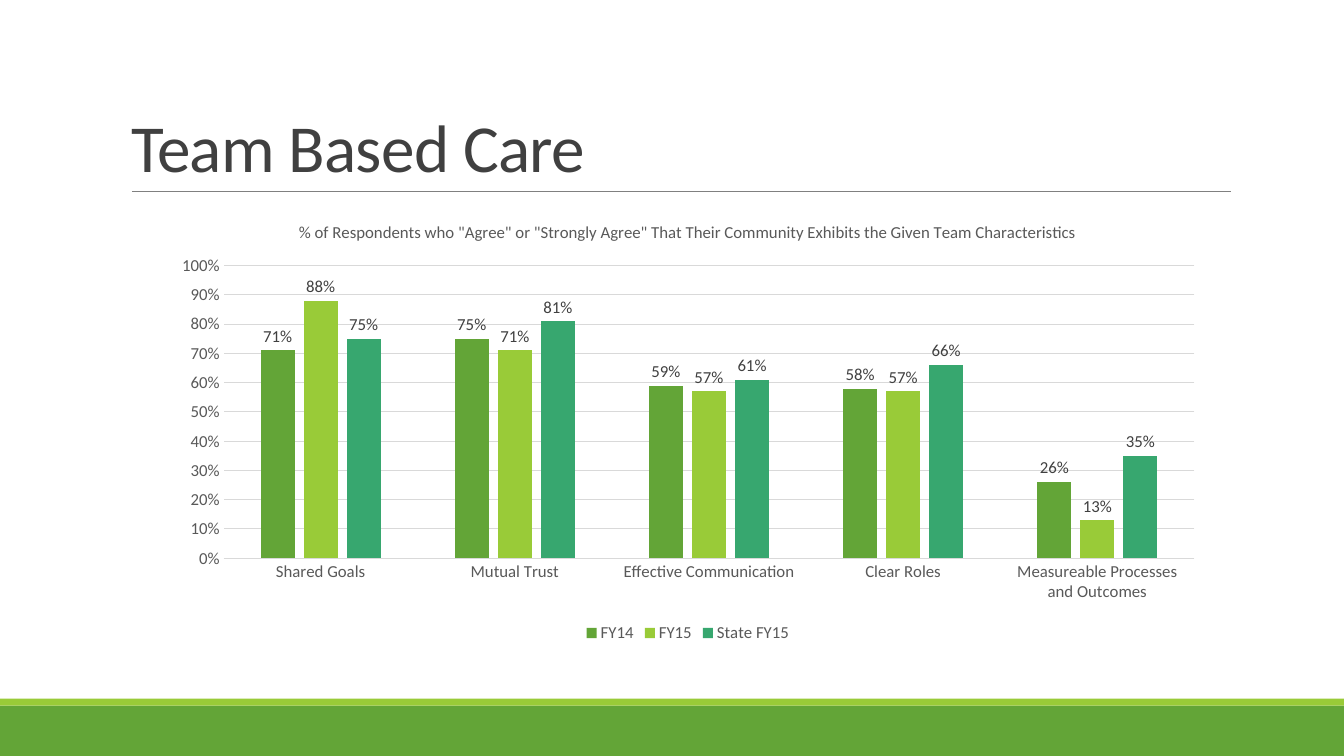
import pptx
import pptx.chart.data
import pptx.dml.color
import pptx.enum.chart
import pptx.enum.shapes
import pptx.enum.text
import pptx.oxml
import pptx.oxml.ns
import pptx.util

Pt = pptx.util.Pt
FONT = "Calibri"
TITLE = "Team Based Care"
CHART_TITLE = ('% of Respondents who "Agree" or "Strongly Agree" '
               "That Their Community Exhibits the Given Team Characteristics")
CATEGORIES = ["Shared Goals", "Mutual Trust", "Effective Communication",
              "Clear Roles", "Measureable Processes and Outcomes"]
SERIES = [
    ("FY14", "green", (0.71, 0.75, 0.59, 0.58, 0.26)),
    ("FY15", "lime", (0.88, 0.71, 0.57, 0.57, 0.13)),
    ("State FY15", "teal", (0.75, 0.81, 0.61, 0.66, 0.35)),
]
COLORS = {"green": "63A537", "lime": "99CB38", "teal": "37A76F", "title": "404040",
          "text": "595959", "grid": "D9D9D9", "rule": "808080"}
PLOT_AREA = {"x": 0.06, "y": 0.14, "w": 0.92, "h": 0.66}  # fractions of the chart
WIDTH, HEIGHT = 960, 540
BANDS = [("green", 504, 36), ("lime", 499, 5)]  # colour, top, height


def rgb(name):
    return pptx.dml.color.RGBColor.from_string(COLORS[name])


def style_font(font, size, color):
    font.name, font.size, font.bold = FONT, Pt(size), False
    font.color.rgb = rgb(color)


def style_line(line, color, width):
    line.color.rgb = rgb(color)
    line.width = Pt(width)


prs = pptx.Presentation()
prs.slide_width, prs.slide_height = Pt(WIDTH), Pt(HEIGHT)
s = prs.slides.add_slide(prs.slide_layouts[5])

# Footer bands
for color, top, height in BANDS:
    sp = s.shapes.add_shape(pptx.enum.shapes.MSO_SHAPE.RECTANGLE,
                            0, Pt(top), Pt(WIDTH), Pt(height))
    sp.shadow.inherit = False
    sp.fill.solid()
    sp.fill.fore_color.rgb = rgb(color)
    sp.line.fill.background()

# Rule under the title
rule = s.shapes.add_connector(pptx.enum.shapes.MSO_CONNECTOR.STRAIGHT,
                              Pt(94.3), Pt(136.8), Pt(879.1), Pt(136.8))
style_line(rule.line, "rule", 0.5)
rule._element.spPr.append(pptx.oxml.parse_xml(
    f'<a:effectLst {pptx.oxml.ns.nsdecls("a")}/>'))

# Title
title = s.shapes.title
title.left, title.top, title.width, title.height = Pt(86.4), Pt(22.3), Pt(792), Pt(114.5)
tf = title.text_frame
tf.text = TITLE
tf.word_wrap = True
tf.auto_size = pptx.enum.text.MSO_AUTO_SIZE.NONE
tf.vertical_anchor = pptx.enum.text.MSO_ANCHOR.BOTTOM
p = tf.paragraphs[0]
p.alignment = pptx.enum.text.PP_ALIGN.LEFT
p.line_spacing = 0.85
r = p.runs[0]
style_font(r.font, 48, "title")
r.font._element.set("spc", "-50")

# Chart
data = pptx.chart.data.CategoryChartData(number_format="0%")
data.categories = CATEGORIES
for name, color, values in SERIES:
    data.add_series(name, values)
chart = s.shapes.add_chart(pptx.enum.chart.XL_CHART_TYPE.COLUMN_CLUSTERED,
                           Pt(114.5), Pt(145.4), Pt(753.8), Pt(316.8), data).chart
style_font(chart.font, 12, "text")
chart.has_title = True
tf = chart.chart_title.text_frame
tf.text = CHART_TITLE
style_font(tf.paragraphs[0].runs[0].font, 12, "text")
chart.chart_title.include_in_layout = False
chart.has_legend = True
chart.legend.position = pptx.enum.chart.XL_LEGEND_POSITION.BOTTOM
chart.legend.include_in_layout = False
style_font(chart.legend.font, 12, "text")

# Columns and their labels
plot = chart.plots[0]
plot.gap_width, plot.overlap, plot.vary_by_categories = 219, -27, False
for series, (name, color, values) in zip(plot.series, SERIES):
    series.format.fill.solid()
    series.format.fill.fore_color.rgb = rgb(color)
    series.invert_if_negative = False
    labels = series.data_labels
    labels.show_value = True
    labels.number_format, labels.number_format_is_linked = "0%", False
    labels.position = pptx.enum.chart.XL_LABEL_POSITION.OUTSIDE_END
    style_font(labels.font, 12, "title")

# Axes
for axis in (chart.category_axis, chart.value_axis):
    axis.major_tick_mark = axis.minor_tick_mark = pptx.enum.chart.XL_TICK_MARK.NONE
    style_font(axis.tick_labels.font, 12, "text")
style_line(chart.category_axis.format.line, "grid", 0.75)
axis = chart.value_axis
axis.minimum_scale, axis.maximum_scale, axis.major_unit = 0, 1, 0.1
axis.tick_labels.number_format, axis.tick_labels.number_format_is_linked = "0%", False
axis.format.line.fill.background()
style_line(axis.major_gridlines.format.line, "grid", 0.75)

# Plot area position
area = chart._chartSpace.chart.plotArea
for old in area.findall(pptx.oxml.ns.qn("c:layout")):
    area.remove(old)
sizes = "".join(f'<c:{key} val="{value}"/>' for key, value in PLOT_AREA.items())
area.insert(0, pptx.oxml.parse_xml(
    f'<c:layout {pptx.oxml.ns.nsdecls("c")}><c:manualLayout><c:layoutTarget val="inner"/>'
    f'<c:xMode val="edge"/><c:yMode val="edge"/>{sizes}</c:manualLayout></c:layout>'))

prs.save("out.pptx")
